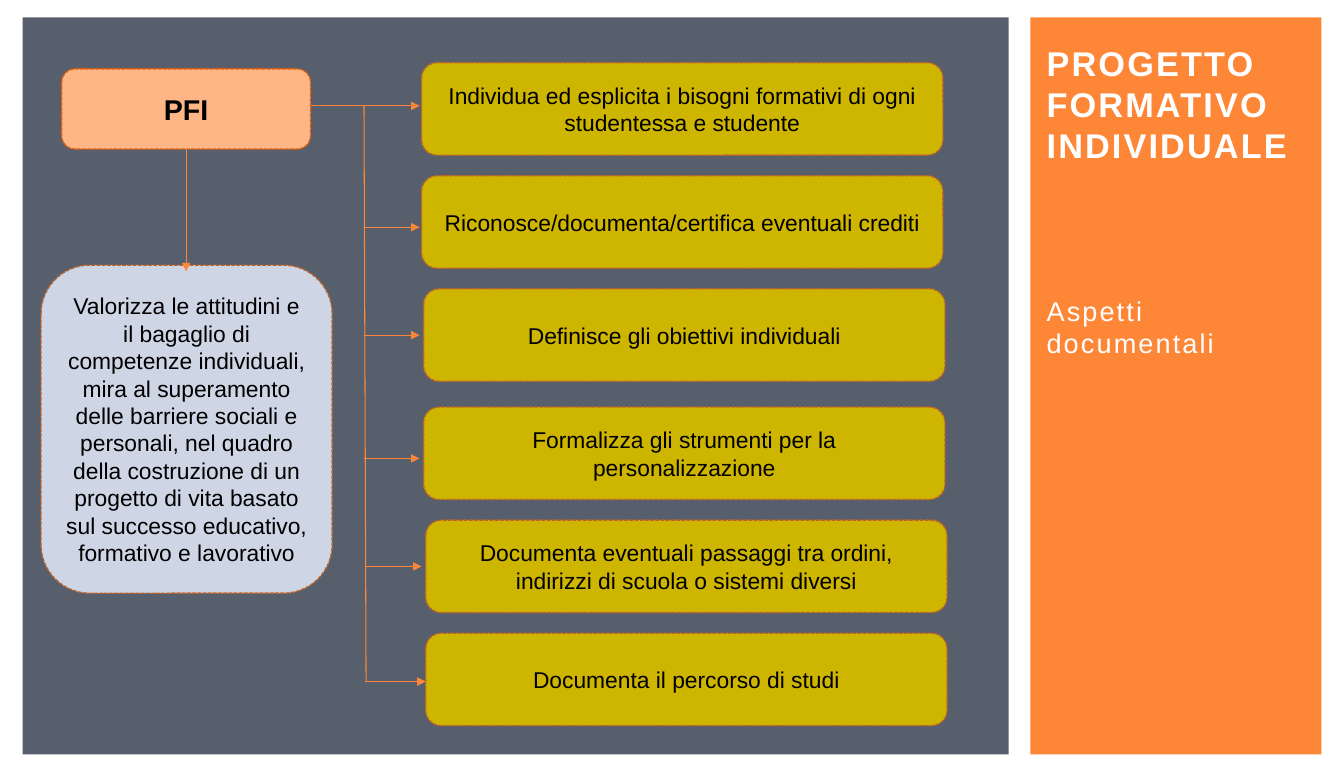
from dataclasses import dataclass

from lxml.etree import SubElement
from pptx import Presentation
from pptx.dml.color import RGBColor
from pptx.enum.dml import MSO_LINE
from pptx.enum.shapes import MSO_CONNECTOR, MSO_SHAPE
from pptx.enum.text import MSO_ANCHOR, PP_ALIGN
from pptx.oxml.ns import qn
from pptx.shapes.autoshape import Shape
from pptx.slide import Slide
from pptx.util import Inches, Pt

WHITE = RGBColor(0xFF, 0xFF, 0xFF)
BLACK = RGBColor(0x00, 0x00, 0x00)
ORANGE = RGBColor(0xFE, 0x86, 0x37)
SLATE = RGBColor(0x57, 0x5F, 0x6D)
PEACH = RGBColor(0xFE, 0xB6, 0x87)
MUSTARD = RGBColor(0xCE, 0xB5, 0x00)
PALE_BLUE = RGBColor(0xCE, 0xD6, 0xE6)
BRIGHT_RUST = RGBColor(0xE7, 0x5C, 0x01)
RUST = RGBColor(0xBC, 0x63, 0x29)


@dataclass(frozen=True)
class Box:
    left: float
    top: float
    width: float
    height: float


@dataclass(frozen=True)
class Card:
    text: str
    box: Box
    fill: RGBColor
    border: RGBColor = RUST
    size: int = 16
    bold: bool = False


@dataclass(frozen=True)
class Line:
    start: tuple[float, float]
    end: tuple[float, float]
    arrow: bool = True


@dataclass(frozen=True)
class Task:
    text: str
    left: float
    top: float
    arrow_start: float
    arrow_end: float
    arrow_y: float


TASKS = [
    Task("Individua ed esplicita i bisogni formativi di ogni studentessa e studente",
         4.1, 0.61, 3.02, 4.08, 1.03),
    Task("Riconosce/documenta/certifica eventuali crediti", 4.1, 1.71, 3.54, 4.08, 2.21),
    Task("Definisce gli obiettivi individuali", 4.12, 2.81, 3.54, 4.08, 3.26),
    Task("Formalizza gli strumenti per la personalizzazione", 4.12, 3.96, 3.54, 4.08, 4.46),
    Task("Documenta eventuali passaggi tra ordini, indirizzi di scuola o sistemi diversi",
         4.14, 5.06, 3.56, 4.1, 5.51),
    Task("Documenta il percorso di studi", 4.14, 6.16, 3.55, 4.14, 6.63),
]

CARDS = [
    Card("PFI", Box(0.6, 0.67, 2.42, 0.78), PEACH, BRIGHT_RUST, 20, True),
    Card("Valorizza le attitudini e il bagaglio di competenze individuali, mira al "
         "superamento delle barriere sociali e personali, nel quadro della costruzione "
         "di un progetto di vita basato sul successo educativo, formativo e lavorativo",
         Box(0.4, 2.58, 2.83, 3.19), PALE_BLUE),
    *(Card(task.text, Box(task.left, task.top, 5.07, 0.9), MUSTARD) for task in TASKS),
]

LINES = [
    Line((3.54, 1.03), (3.56, 6.63), arrow=False),
    Line((1.81, 1.45), (1.81, 2.64)),
    *(Line((task.arrow_start, task.arrow_y), (task.arrow_end, task.arrow_y)) for task in TASKS),
]


def write_text(shape: Shape, text: str, *, size: int, color: RGBColor, bold: bool = False,
               align: PP_ALIGN = PP_ALIGN.LEFT, spacing: float = 0) -> None:
    frame = shape.text_frame
    frame.word_wrap = True
    frame.vertical_anchor = MSO_ANCHOR.MIDDLE
    paragraph = frame.paragraphs[0]
    paragraph.alignment = align
    run = paragraph.add_run()
    run.text = text
    run.font.name = "Arial"
    run.font.size = Pt(size)
    run.font.bold = bold
    run.font.color.rgb = color
    if spacing:
        run._r.get_or_add_rPr().set("spc", str(round(spacing * 100)))


def add_filled(slide: Slide, kind: MSO_SHAPE, box: Box, fill: RGBColor) -> Shape:
    shape = slide.shapes.add_shape(
        kind, Inches(box.left), Inches(box.top), Inches(box.width), Inches(box.height))
    shape.shadow.inherit = False
    shape.fill.solid()
    shape.fill.fore_color.rgb = fill
    return shape


def add_panel(slide: Slide, box: Box, fill: RGBColor) -> None:
    add_filled(slide, MSO_SHAPE.RECTANGLE, box, fill).line.fill.background()


def add_card(slide: Slide, card: Card) -> None:
    shape = add_filled(slide, MSO_SHAPE.ROUNDED_RECTANGLE, card.box, card.fill)
    shape.line.color.rgb = card.border
    shape.line.width = Pt(0.9)
    shape.line.dash_style = MSO_LINE.SQUARE_DOT
    write_text(shape, card.text, size=card.size, color=BLACK, bold=card.bold,
               align=PP_ALIGN.CENTER)


def add_heading(slide: Slide, text: str, box: Box, size: int, bold: bool = False) -> None:
    heading = slide.shapes.add_textbox(
        Inches(box.left), Inches(box.top), Inches(box.width), Inches(box.height))
    write_text(heading, text, size=size, color=WHITE, bold=bold, spacing=1.5)


def add_line(slide: Slide, line: Line) -> None:
    connector = slide.shapes.add_connector(
        MSO_CONNECTOR.STRAIGHT, *map(Inches, line.start), *map(Inches, line.end))
    connector.line.color.rgb = ORANGE
    connector.line.width = Pt(0.75)
    if line.arrow:
        SubElement(connector.line._get_or_add_ln(), qn("a:tailEnd"), type="triangle")
    SubElement(connector._element.spPr, qn("a:effectLst"))


def main() -> None:
    presentation = Presentation()
    presentation.slide_width = Inches(13.07)
    presentation.slide_height = Inches(7.5)
    slide = presentation.slides.add_slide(presentation.slide_layouts[6])
    add_panel(slide, Box(10.02, 0.17, 2.83, 7.17), ORANGE)
    add_panel(slide, Box(0.22, 0.17, 9.59, 7.17), SLATE)
    add_heading(slide, "PROGETTO FORMATIVO INDIVIDUALE", Box(10.08, 0.21, 2.99, 1.6), 24, True)
    add_heading(slide, "Aspetti documentali", Box(10.08, 2.18, 2.83, 2), 19)
    for card in CARDS:
        add_card(slide, card)
    for line in LINES:
        add_line(slide, line)
    presentation.save("out.pptx")


if __name__ == "__main__":
    main()
